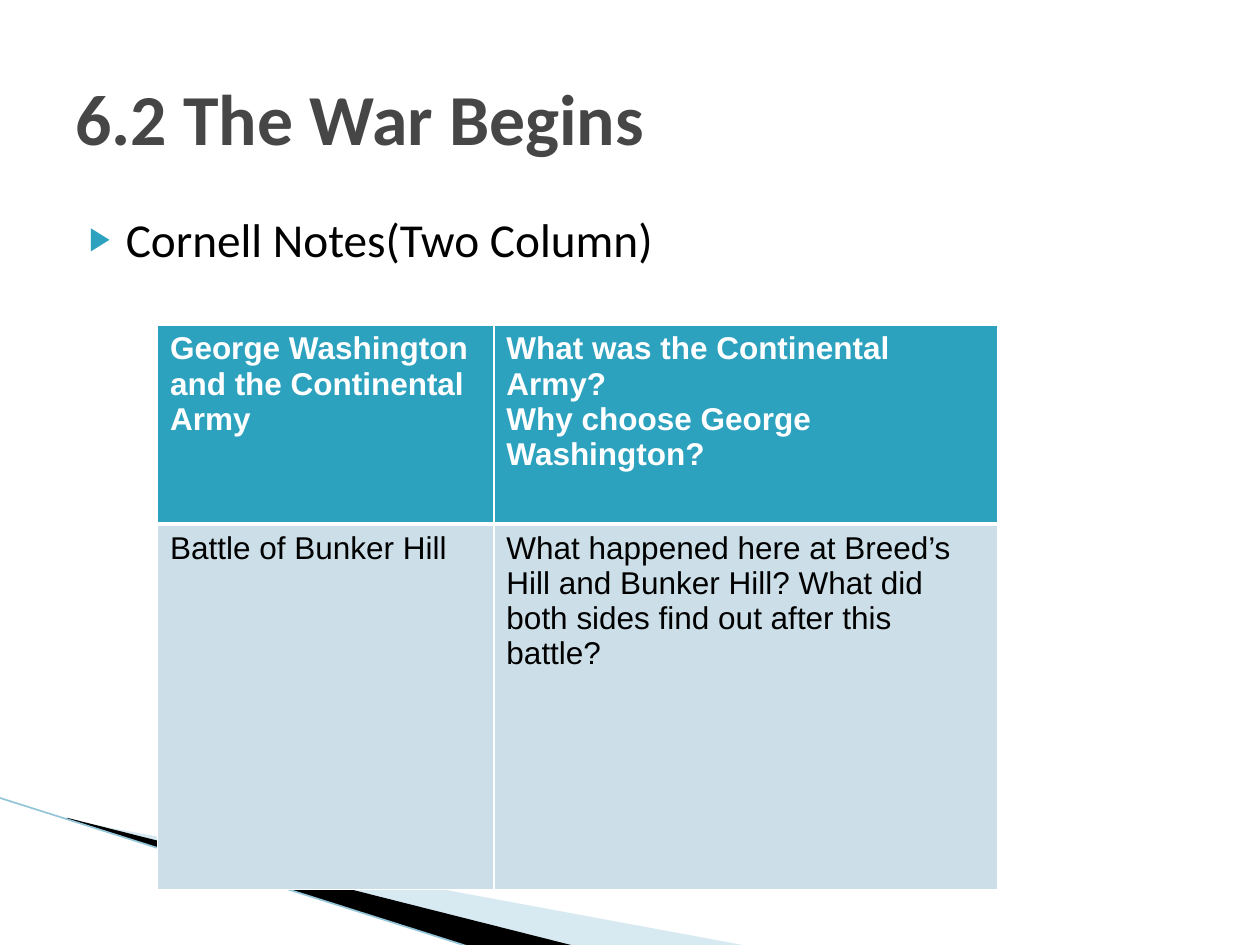
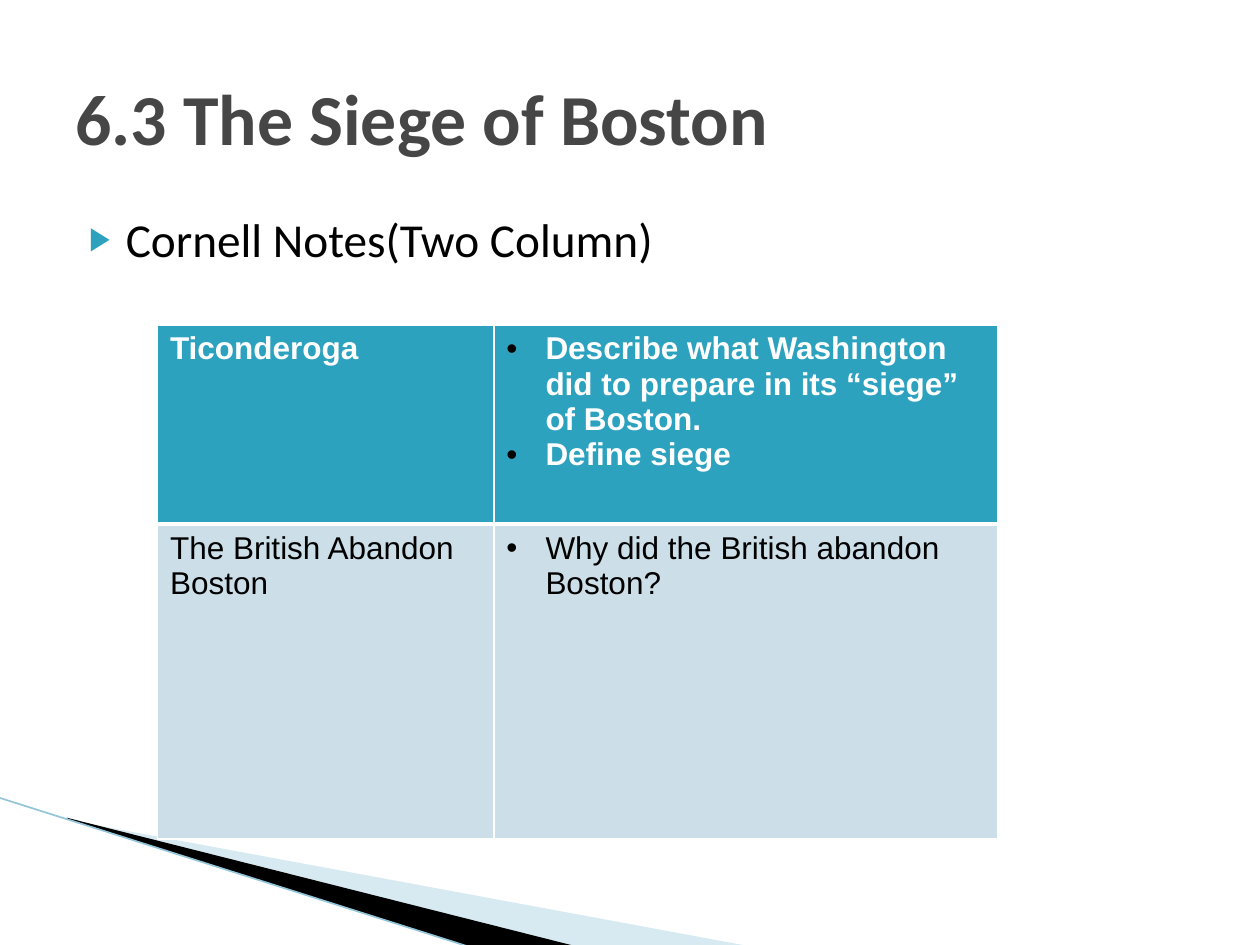
"""Build two Cornell-notes slides on the War of Independence."""
from lxml import etree
from pptx import Presentation
from pptx import util as u
from pptx.dml.color import RGBColor
from pptx.enum import shapes, text
from pptx.oxml.ns import qn

COLORS = {
    "title": "464646",
    "accent": "2DA2BF",
    "cell": "CCDFE8",
    "swoosh": "9CCADC",
    "edge": "93C5D8",
    "black": "000000",
    "white": "FFFFFF",
}
SUBTITLE = "Cornell Notes(Two Column)"
COL_WIDTHS = (2.67, 4)
HEADER_HEIGHT = 1.58
LESSONS = [
    {
        "title": "6.2 The War Begins",
        "rows": [
            (["George Washington and the Continental Army"],
             ["What was the Continental Army?", "Why choose George Washington?"]),
            (["Battle of Bunker Hill"],
             ["What happened here at Breed’s Hill and Bunker Hill? "
              "What did both sides find out after this battle?"]),
        ],
        "body_height": 2.9,
        "bulleted": False,
    },
    {
        "title": "6.3 The Siege of Boston",
        "rows": [
            (["Ticonderoga"],
             ["Describe what Washington did to prepare in its “siege” of Boston.",
              "Define siege"]),
            (["The British Abandon Boston"],
             ["Why did the British abandon Boston?"]),
        ],
        "body_height": 2.5,
        "bulleted": True,
    },
]


def rgb(name):
    """Return the named colour."""
    return RGBColor.from_string(COLORS[name])


def sub(parent, tag, **attrs):
    """Append an XML child with the given attributes."""
    child = etree.SubElement(parent, qn(tag))
    for key, value in attrs.items():
        child.set(key, str(value))
    return child


def write(tf, lines, font, size, color, bold=False):
    """Fill a text frame with equally formatted paragraphs."""
    tf.word_wrap = True
    tf.text = "\n".join(lines)
    for p in tf.paragraphs:
        for r in p.runs:
            r.font.name = font
            r.font.size = u.Pt(size)
            r.font.bold = bold
            r.font.color.rgb = rgb(color)


def add_bullet(p, char, color, indent, hanging, percent=100):
    """Give a paragraph a hanging bullet."""
    ppr = p._p.get_or_add_pPr()
    ppr.set("marL", str(u.Inches(indent)))
    ppr.set("indent", str(-u.Inches(hanging)))
    sub(sub(ppr, "a:buClr"), "a:srgbClr", val=COLORS[color])
    sub(ppr, "a:buSzPct", val=percent * 1000)
    sub(ppr, "a:buFont", typeface="Arial")
    sub(ppr, "a:buChar", char=char)


def add_text(s, box, line, size, color, bold=False, anchor=text.MSO_ANCHOR.TOP):
    """Add a one-paragraph text box and return its paragraph."""
    tf = s.shapes.add_textbox(*map(u.Inches, box)).text_frame
    write(tf, [line], "Calibri", size, color, bold)
    tf.vertical_anchor = anchor
    return tf.paragraphs[0]


def paint(sp, color):
    """Fill a shape flat, without outline or shadow."""
    sp.shadow.inherit = False
    sp.fill.solid()
    sp.fill.fore_color.rgb = rgb(color)
    sp.line.fill.background()


def add_polygon(s, points, color):
    """Add a closed filled outline through points in inches."""
    start, *rest = [(u.Inches(x), u.Inches(y)) for x, y in points]
    builder = s.shapes.build_freeform(*start)
    builder.add_line_segments(rest, close=True)
    sp = builder.convert_to_shape()
    paint(sp, color)
    return sp


def add_swoosh(s):
    """Draw the slanted band in the lower left corner."""
    pale = add_polygon(s, [(0.55, 6.51), (5.95, 7.51), (4.56, 7.51), (0.55, 6.5)],
                       "swoosh")
    clr = pale.fill._xPr.find(qn("a:solidFill")).find(qn("a:srgbClr"))
    sub(clr, "a:alpha", val=40000)
    add_polygon(s, [(0.53, 6.49), (4.57, 7.51), (3.72, 7.52), (0.54, 6.5)], "black")
    left, top, width, height = map(u.Inches, (-0.01, 6.33, 3.72, 1.18))
    corner = s.shapes.add_shape(shapes.MSO_SHAPE.RIGHT_TRIANGLE,
                                left, top, width, height)
    paint(corner, "white")
    edge = s.shapes.add_connector(shapes.MSO_CONNECTOR.STRAIGHT,
                                  left, top, left + width, top + height)
    edge.line.color.rgb = rgb("edge")
    edge.line.width = u.Pt(0.95)
    sub(edge._element.spPr, "a:effectLst")


def add_borders(cell, **widths):
    """Set white cell borders, one point wide unless given by side."""
    tcpr = cell._tc.get_or_add_tcPr()
    for side in "LRTB":
        ln = sub(tcpr, f"a:ln{side}", w=u.Pt(widths.get(side, 1)))
        sub(sub(ln, "a:solidFill"), "a:srgbClr", val=COLORS["white"])


def add_notes_table(s, rows, body_height, bulleted):
    """Add the two-column table of topics and questions."""
    heights = (HEADER_HEIGHT, body_height)
    frame = s.shapes.add_table(len(rows), len(COL_WIDTHS),
                               u.Inches(1.25), u.Inches(2.58),
                               u.Inches(sum(COL_WIDTHS)), u.Inches(sum(heights)))
    table = frame.table
    for column, width in zip(table.columns, COL_WIDTHS):
        column.width = u.Inches(width)
    for i, (row, height) in enumerate(zip(rows, heights)):
        table.rows[i].height = u.Inches(height)
        header = i == 0
        for j, lines in enumerate(row):
            cell = table.cell(i, j)
            add_borders(cell, **({"B": 3} if header else {"T": 3}))
            cell.fill.solid()
            cell.fill.fore_color.rgb = rgb("accent" if header else "cell")
            write(cell.text_frame, lines, "Arial", 18,
                  "white" if header else "black", header)
            if bulleted and j == 1:
                for p in cell.text_frame.paragraphs:
                    add_bullet(p, "•", "black", 0.31, 0.31)


def add_lesson(prs, lesson):
    """Add one lesson slide."""
    s = prs.slides.add_slide(prs.slide_layouts[6])
    add_swoosh(s)
    p = add_text(s, (0.5, 1.62, 9, 4.95), SUBTITLE, 27, "black")
    add_bullet(p, "▶", "accent", 0.4, 0.29, 68)
    add_text(s, (0.5, 0.3, 9, 1.25), lesson["title"], 41, "title", True,
             text.MSO_ANCHOR.MIDDLE)
    add_notes_table(s, lesson["rows"], lesson["body_height"], lesson["bulleted"])


def main():
    """Build and save the presentation."""
    prs = Presentation()
    prs.slide_width, prs.slide_height = u.Inches(10), u.Inches(7.5)
    for lesson in LESSONS:
        add_lesson(prs, lesson)
    prs.save("out.pptx")


if __name__ == "__main__":
    main()
